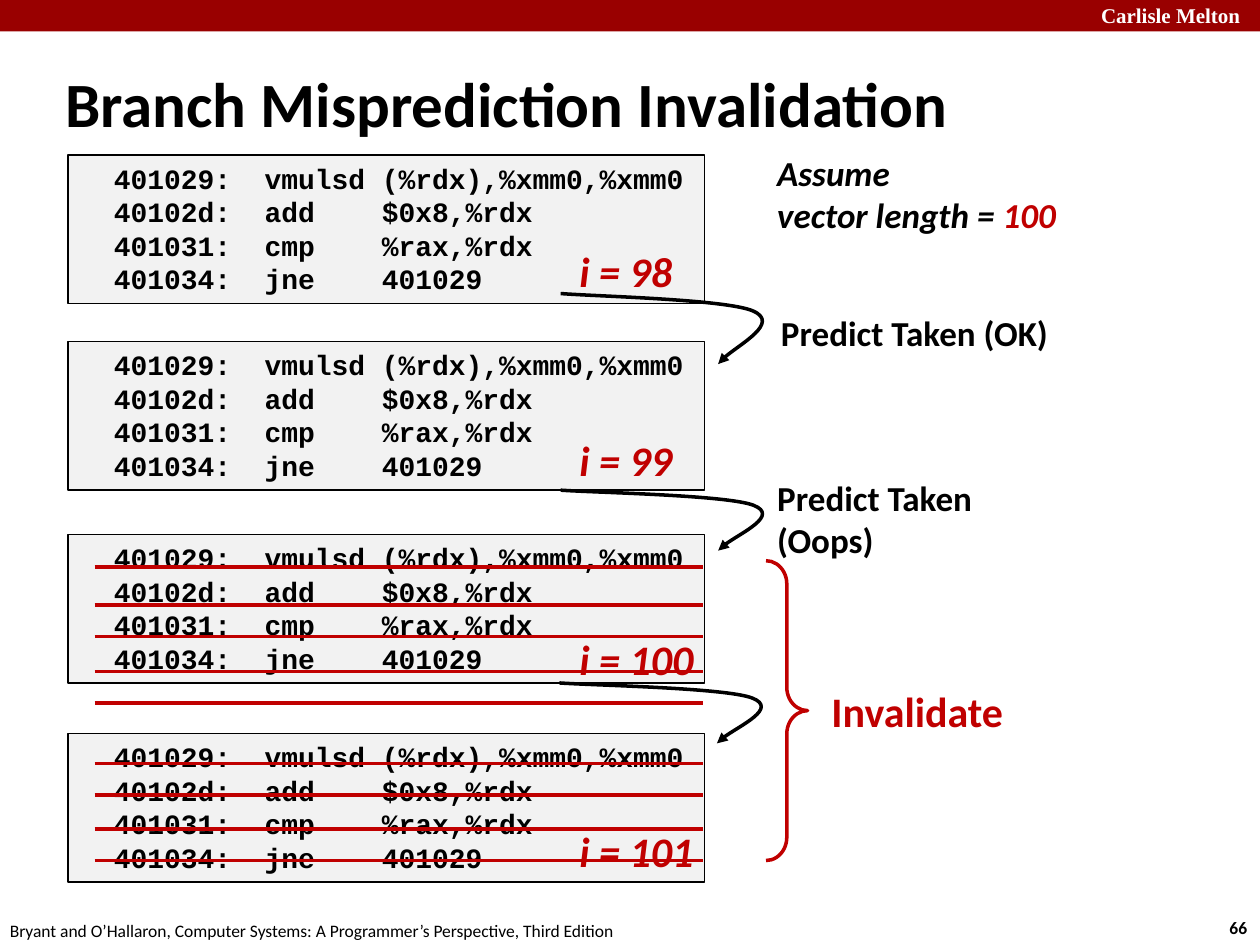
from pptx import Presentation
from pptx.dml.color import RGBColor
from pptx.enum.shapes import MSO_CONNECTOR as Link, MSO_SHAPE as Kind
from pptx.enum.text import MSO_ANCHOR as Anchor, PP_ALIGN as Align
from pptx.oxml.xmlchemy import OxmlElement as Node
from pptx.util import Inches, Pt

HUES = {"bar": "990000", "red": "C00000", "ink": "000000",
        "code": "F2F2F2", "white": "FFFFFF"}
CODE = ["  401029:  vmulsd (%rdx),%xmm0,%xmm0",
        "  40102d:  add    $0x8,%rdx",
        "  401031:  cmp    %rax,%rdx",
        "  401034:  jne    401029"]
# Top of each code box, its loop index, and the top of that label
STEPS = [(1.23, 98, 1.9), (2.71, 99, 3.4), (4.24, 100, 4.98), (5.82, 101, 6.5)]
# Left, top and height of each jump arrow
JUMPS = [(4.45, 2.33, 0.56), (4.45, 3.89, 0.48), (4.44, 5.42, 0.48)]
# Bezier points: x in inches from the start, y as a share of the height
BEND = [(0, 0), (0.26, 0.04), (1.32, 0.08), (1.53, 0.25),
        (1.74, 0.42), (1.31, 0.83), (1.25, 1)]
STRIKES = [4.5, 4.8, 5.05, 5.33, 5.58, 6.06, 6.31, 6.58, 6.83]


def hue(name):
    return RGBColor.from_string(HUES[name])


class Page:
    """Draws elements on one slide in the deck's style."""

    def __init__(self, slide, font="Calibri"):
        self.shapes = slide.shapes
        self.font = font

    def fill(self, frame, lines, size, color="ink", font=None,
             bold=True, italic=False):
        """Put lines in a frame; each is a string or a list of (text, color) runs."""
        frame.word_wrap = False
        for num, line in enumerate(lines):
            para = frame.add_paragraph() if num else frame.paragraphs[0]
            para.alignment = Align.LEFT
            for text, tint in [(line, color)] if isinstance(line, str) else line:
                run = para.add_run()
                run.text = text
                run.font.name = font or self.font
                run.font.size = Pt(size)
                run.font.bold = bold
                run.font.italic = italic
                run.font.color.rgb = hue(tint)

    def text(self, x, y, w, h, lines, size, anchor=Anchor.TOP, **style):
        box = self.shapes.add_textbox(Inches(x), Inches(y), Inches(w), Inches(h))
        box.text_frame.vertical_anchor = anchor
        self.fill(box.text_frame, lines, size, **style)

    def stroke(self, item, color, width):
        item.line.color.rgb = hue(color)
        item.line.width = Pt(width)

    def shape(self, kind, x, y, w, h, fill=None, line=None, width=0.75):
        item = self.shapes.add_shape(kind, Inches(x), Inches(y), Inches(w), Inches(h))
        item.shadow.inherit = False
        if fill:
            item.fill.solid()
            item.fill.fore_color.rgb = hue(fill)
        else:
            item.fill.background()
        if line:
            self.stroke(item, line, width)
        else:
            item.line.fill.background()
        return item

    def code(self, y):
        box = self.shape(Kind.RECTANGLE, 0.54, y, 5.05, 1.18, "code", "ink")
        box.text_frame.vertical_anchor = Anchor.TOP
        self.fill(box.text_frame, CODE, 16, font="Courier New")

    def jump(self, x, y, h):
        """Curved arrow from one code box to the next."""
        spots = [(Inches(x + dx), Inches(y + dy * h)) for dx, dy in BEND]
        pen = self.shapes.build_freeform(*spots[0])
        pen.add_line_segments(spots[1:], close=False)
        item = pen.convert_to_shape()
        item.shadow.inherit = False
        item.fill.background()
        self.stroke(item, "ink", 2)
        tip = Node("a:tailEnd")
        tip.set("type", "triangle")
        item.line._get_or_add_ln().append(tip)
        # Each three straight segments become one cubic curve
        route = item._element.xpath(".//a:path")[0]
        legs = route.xpath("a:lnTo")
        for start in range(0, len(legs), 3):
            curve = Node("a:cubicBezTo")
            route.append(curve)
            for leg in legs[start:start + 3]:
                curve.append(leg[0])
                route.remove(leg)

    def strike(self, y):
        rule = self.shapes.add_connector(
            Link.STRAIGHT, Inches(0.75), Inches(y), Inches(5.58), Inches(y))
        self.stroke(rule, "red", 2)
        rule._element.spPr.append(Node("a:effectLst"))

    def brace(self, x, y, w, h):
        item = self.shape(Kind.RIGHT_BRACE, x, y, w, h, line="red", width=2)
        item.adjustments[0] = 0.56
        item.adjustments[1] = 0.5


def main():
    deck = Presentation()
    deck.slide_width, deck.slide_height = Inches(10), Inches(7.5)
    page = Page(deck.slides.add_slide(deck.slide_layouts[6]))

    page.shape(Kind.RECTANGLE, 0, 0, 10, 0.25, "bar")
    page.text(8.64, -0.03, 1.43, 0.3, ["Carlisle Melton"], 12,
              color="white", font="Times New Roman")
    page.text(9.66, 7.23, 0.37, 0.27, ["66"], 10)
    page.text(-0.02, 7.25, 5.08, 0.27,
              ["Bryant and O’Hallaron, Computer Systems: "
               "A Programmer’s Perspective, Third Edition"], 10, bold=False)
    page.text(0.42, 0.5, 8.69, 0.63, ["Branch Misprediction Invalidation"], 36,
              anchor=Anchor.MIDDLE)

    for top, _, _ in STEPS:
        page.code(top)
    for spot in JUMPS:
        page.jump(*spot)
    for _, num, top in STEPS:
        page.text(4.5, top, 0.94 if num < 100 else 1.11, 0.5, [f"i = {num}"], 24,
                  color="red", italic=True)

    page.text(6.07, 1.15, 2.43, 0.77,
              ["Assume", [("vector length = ", "ink"), ("100", "red")]], 20,
              italic=True)
    page.text(6.1, 2.42, 2.34, 0.44, ["Predict Taken (OK)"], 20)
    page.text(6.07, 3.73, 1.76, 0.77, ["Predict Taken", "(Oops)"], 20)
    page.text(6.5, 5.39, 1.58, 0.5, ["Invalidate"], 24, color="red")

    for y in STRIKES:
        page.strike(y)
    page.brace(6.08, 4.45, 0.33, 2.38)
    deck.save("out.pptx")


if __name__ == "__main__":
    main()
